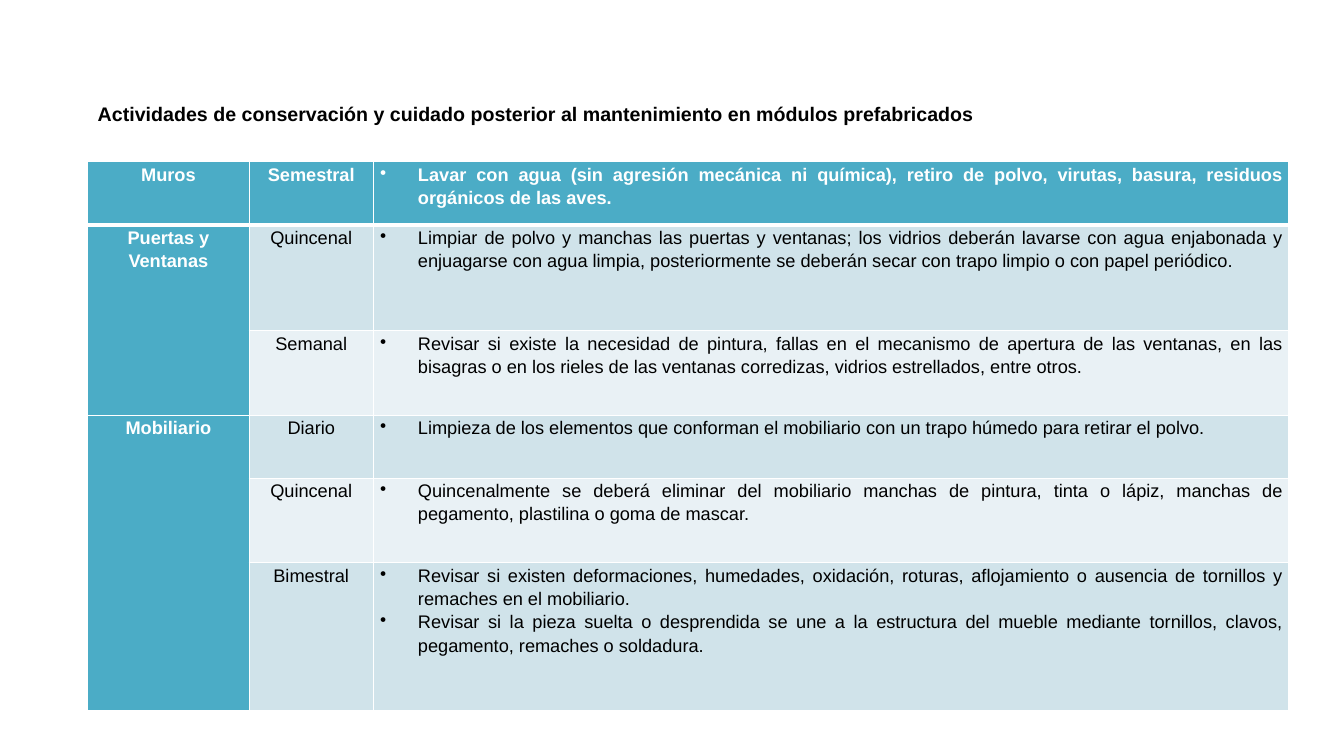
from lxml.etree import SubElement
from pptx import Presentation
from pptx.dml.color import RGBColor
from pptx.enum.text import MSO_ANCHOR, MSO_AUTO_SIZE, PP_ALIGN
from pptx.oxml.ns import qn
from pptx.util import Pt

TEAL, PALE, PALEST = "4BACC6", "D0E3EA", "E9F1F5"
WHITE, BLACK = "FFFFFF", "000000"


def style_font(paragraph, size, color, bold):
    font = paragraph.font
    font.name, font.size, font.bold = "Arial", Pt(size), bold
    font.color.rgb = RGBColor.from_string(color)


def fill_cell(cell, lines, fill, color, bold, bulleted, bottom_width):
    cell.margin_left = cell.margin_right = Pt(5)
    cell.margin_top = cell.margin_bottom = 0
    # White borders go ahead of the fill
    properties = cell._tc.get_or_add_tcPr()
    for side, width in (("L", 1), ("R", 1), ("T", 1), ("B", bottom_width)):
        border = SubElement(properties, qn(f"a:ln{side}"), w=str(Pt(width)))
        SubElement(SubElement(border, qn("a:solidFill")), qn("a:srgbClr"), val=WHITE)
    cell.fill.solid()
    cell.fill.fore_color.rgb = RGBColor.from_string(fill)

    cell.text = "\n".join(lines)
    for paragraph in cell.text_frame.paragraphs:
        paragraph.line_spacing = 1.15
        if bulleted:
            paragraph.alignment = PP_ALIGN.JUSTIFY
            indent = paragraph._p.get_or_add_pPr()
            indent.set("marL", str(Pt(27)))
            indent.set("indent", str(Pt(-27)))
            SubElement(indent, qn("a:buChar"), char="•")
        else:
            paragraph.alignment = PP_ALIGN.CENTER
            paragraph.space_after = Pt(10)
        style_font(paragraph, 13, color, bold)


presentation = Presentation()
presentation.slide_width, presentation.slide_height = Pt(960), Pt(540)
slide = presentation.slides.add_slide(presentation.slide_layouts[5])

# Heading
heading = slide.shapes.title
heading.left, heading.top, heading.width, heading.height = Pt(62.6), Pt(69), Pt(754), Pt(24.5)
heading.text = "Actividades de conservación y cuidado posterior al mantenimiento en módulos prefabricados"
heading.text_frame.word_wrap = True
heading.text_frame.auto_size = MSO_AUTO_SIZE.SHAPE_TO_FIT_TEXT
heading.text_frame.vertical_anchor = MSO_ANCHOR.TOP
heading.text_frame.paragraphs[0].alignment = PP_ALIGN.LEFT
style_font(heading.text_frame.paragraphs[0], 14, BLACK, True)

# Schedule: element, frequency, activities, row height
schedule = [
    ("Muros", "Semestral", [
        "Lavar con agua (sin agresión mecánica ni química), retiro de polvo, virutas, "
        "basura, residuos orgánicos de las aves."], 45),
    ("Puertas y Ventanas", "Quincenal", [
        "Limpiar de polvo y manchas las puertas y ventanas; los vidrios deberán lavarse con "
        "agua enjabonada y enjuagarse con agua limpia, posteriormente se deberán secar con "
        "trapo limpio o con papel periódico."], 75.7),
    ("", "Semanal", [
        "Revisar si existe la necesidad de pintura, fallas en el mecanismo de apertura de las "
        "ventanas, en las bisagras o en los rieles de las ventanas corredizas, vidrios "
        "estrellados, entre otros."], 60.4),
    ("Mobiliario", "Diario", [
        "Limpieza de los elementos que conforman el mobiliario con un trapo húmedo para "
        "retirar el polvo."], 45),
    ("", "Quincenal", [
        "Quincenalmente se deberá eliminar del mobiliario manchas de pintura, tinta o lápiz, "
        "manchas de pegamento, plastilina o goma de mascar."], 60.4),
    ("", "Bimestral", [
        "Revisar si existen deformaciones, humedades, oxidación, roturas, aflojamiento o "
        "ausencia de tornillos y remaches en el mobiliario.",
        "Revisar si la pieza suelta o desprendida se une a la estructura del mueble mediante "
        "tornillos, clavos, pegamento, remaches o soldadura."], 105.5),
]

# Table
table = slide.shapes.add_table(
    len(schedule), 3, Pt(62.6), Pt(115.5), Pt(858), Pt(392)).table
for column, width in zip(table.columns, (115.4, 88.6, 654)):
    column.width = Pt(width)

for row, (element, frequency, activities, height) in enumerate(schedule):
    table.rows[row].height = Pt(height)
    for column, lines in enumerate(([element], [frequency], activities)):
        strong = row == 0 or column == 0
        fill = TEAL if strong else PALE if row % 2 or row == 5 else PALEST
        fill_cell(table.cell(row, column), lines, fill, WHITE if strong else BLACK,
                  strong, column == 2, 3 if row == 0 else 1)

# Elements that cover several frequencies
for first, last in ((1, 2), (3, 5)):
    table.cell(first, 0).merge(table.cell(last, 0))

presentation.save("out.pptx")
